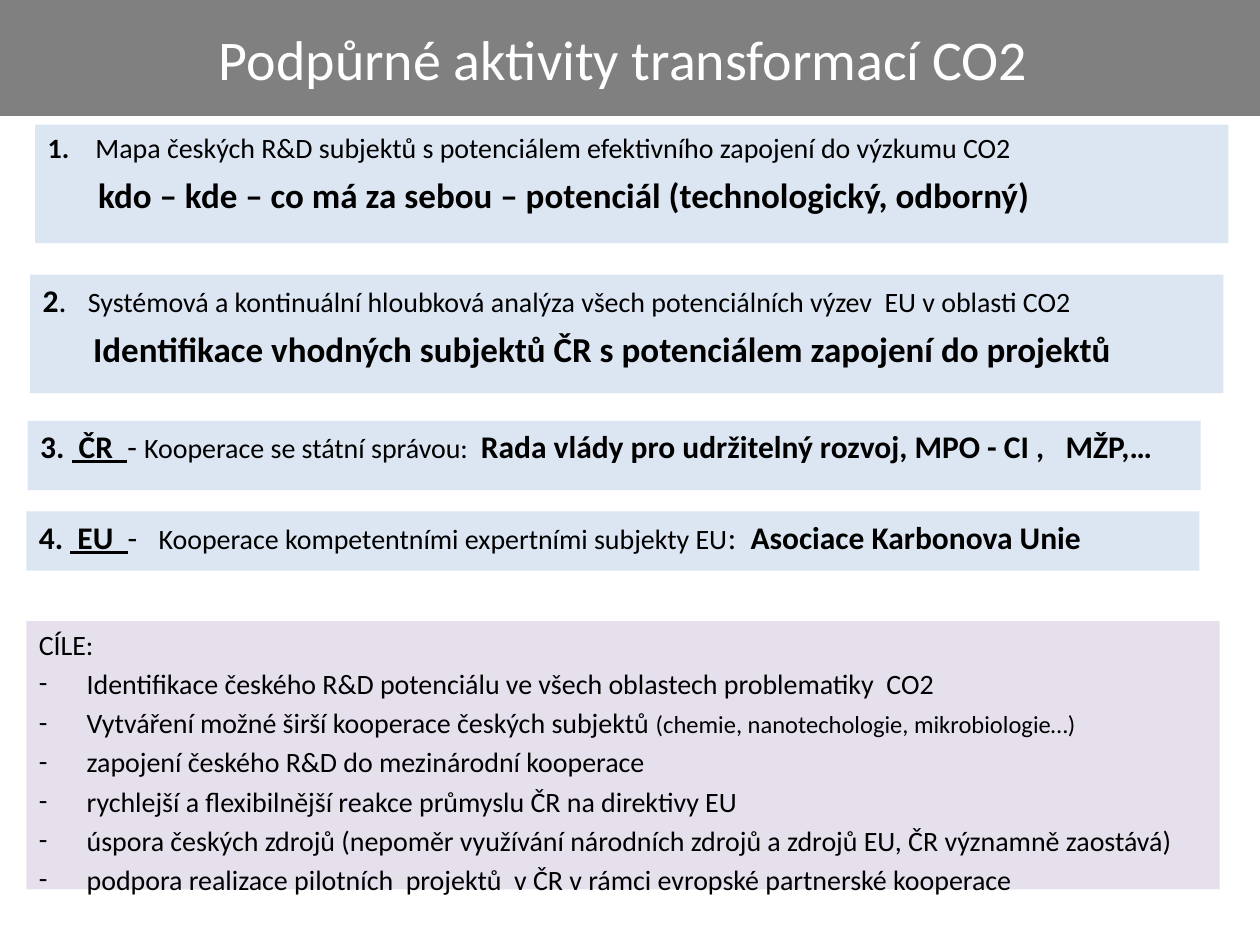
import pptx
import pptx.util
import pptx.dml.color
import pptx.enum.text
import pptx.oxml
import pptx.oxml.ns

Inches, Pt = pptx.util.Inches, pptx.util.Pt
RGBColor = pptx.dml.color.RGBColor

BLACK = RGBColor(0x00, 0x00, 0x00)
WHITE = RGBColor(0xFF, 0xFF, 0xFF)
GRAY = RGBColor(0x80, 0x80, 0x80)
BLUE = RGBColor(0xDC, 0xE6, 0xF2)
LILAC = RGBColor(0xE6, 0xE0, 0xEC)
FONT = "Calibri"
INDENT = 0.38

# Content: a run is (text, format), a paragraph is (layout, runs)
TITLE = "Podpůrné aktivity transformací CO2 "
BIG = dict(size=20, bold=True)
STRONG = dict(size=18, bold=True)
LINK = dict(size=18, bold=True, underline=True)
MEDIUM = dict(size=18)
NUMBERED = dict(left=INDENT, hang=INDENT)
INDENTED = dict(left=0.4, before=5)
BULLET = dict(left=INDENT, hang=INDENT, bullet="-")

ACTIVITIES = [
    ((0.28, 0.99, 9.47, 0.94), [
        (NUMBERED, [("1.\t", dict(bold=True)),
                    ("Mapa českých R&D subjektů s potenciálem efektivního zapojení do výzkumu CO2", {})]),
        (INDENTED, [("kdo – kde – co má za sebou – potenciál (technologický, odborný)", BIG)]),
    ]),
    ((0.24, 2.18, 9.47, 0.94), [
        (dict(left=0.36, hang=0.36), [
            ("2", STRONG), (".\t", MEDIUM),
            ("Systémová a kontinuální hloubková analýza všech potenciálních výzev  EU v oblasti CO2", {})]),
        (INDENTED, [("Identifikace vhodných subjektů ČR s potenciálem zapojení do projektů", BIG)]),
    ]),
    ((0.22, 3.34, 9.31, 0.55), [
        ({}, [("3. ", STRONG), (" ČR  ", LINK), ("- ", MEDIUM),
              ("Kooperace se státní správou:  ", {}),
              ("Rada vlády pro udržitelný rozvoj, MPO - CI ,   MŽP,…", STRONG)]),
    ]),
    ((0.21, 4.06, 9.31, 0.47), [
        ({}, [("4. ", STRONG), (" EU  ", LINK), ("-   ", MEDIUM),
              ("Kooperace kompetentními expertními subjekty EU", {}),
              (": ", MEDIUM), (" Asociace Karbonova Unie", STRONG)]),
    ]),
]

GOALS_BOX = (0.21, 4.93, 9.47, 2.13)
GOALS_HEADING = "CÍLE:"
GOALS = [
    [("Identifikace českého R&D potenciálu ve všech oblastech problematiky  CO2", {})],
    [("Vytváření možné širší kooperace českých subjektů ", {}),
     ("(chemie, nanotechologie, mikrobiologie…)", dict(size=14))],
    [("zapojení českého R&D do mezinárodní kooperace", {})],
    [("rychlejší a flexibilnější reakce průmyslu ČR na direktivy EU", {})],
    [("úspora českých zdrojů (nepoměr využívání národních zdrojů a zdrojů EU, ČR významně zaostává)", {})],
    [("podpora realizace pilotních  projektů  v ČR v rámci evropské partnerské kooperace", {})],
]


def add_text(p, text, size=16, bold=False, underline=False, color=BLACK):
    r = p.add_run()
    r.text = text
    f = r.font
    f.name, f.size, f.bold, f.underline = FONT, Pt(size), bold, underline
    f.color.rgb = color


def set_layout(p, left=0, hang=0, before=3.2, bullet=None):
    p.space_before = Pt(before)
    pPr = p._p.get_or_add_pPr()
    pPr.set("marL", str(Inches(left)))
    pPr.set("indent", str(-Inches(hang)))
    if bullet:
        ns = pptx.oxml.ns.nsdecls("a")
        for tag in (f'buFont {ns} typeface="{FONT}"', f'buChar {ns} char="{bullet}"'):
            pPr.append(pptx.oxml.parse_xml(f"<a:{tag}/>"))


def add_box(s, box, fill, paragraphs):
    sp = s.shapes.add_textbox(*map(Inches, box))
    sp.fill.solid()
    sp.fill.fore_color.rgb = fill
    tf = sp.text_frame
    tf.word_wrap = True
    for i, (layout, runs) in enumerate(paragraphs):
        p = tf.add_paragraph() if i else tf.paragraphs[0]
        set_layout(p, **layout)
        for text, style in runs:
            add_text(p, text, **style)


def main():
    prs = pptx.Presentation()
    prs.slide_width, prs.slide_height = Inches(10), Inches(7.5)
    s = prs.slides.add_slide(prs.slide_layouts[5])

    # Title band
    sp = s.shapes.title
    sp.left, sp.top, sp.width, sp.height = map(Inches, (0, 0, 10, 0.92))
    sp.fill.solid()
    sp.fill.fore_color.rgb = GRAY
    tf = sp.text_frame
    tf.auto_size = pptx.enum.text.MSO_AUTO_SIZE.NONE
    tf.vertical_anchor = pptx.enum.text.MSO_ANCHOR.MIDDLE
    p = tf.paragraphs[0]
    p.alignment = pptx.enum.text.PP_ALIGN.CENTER
    add_text(p, TITLE, size=32, color=WHITE)

    # Activities
    for box, paragraphs in ACTIVITIES:
        add_box(s, box, BLUE, paragraphs)

    # Goals
    goals = [({}, [(GOALS_HEADING, {})])] + [(BULLET, runs) for runs in GOALS]
    add_box(s, GOALS_BOX, LILAC, goals)

    prs.save("out.pptx")


if __name__ == "__main__":
    main()
